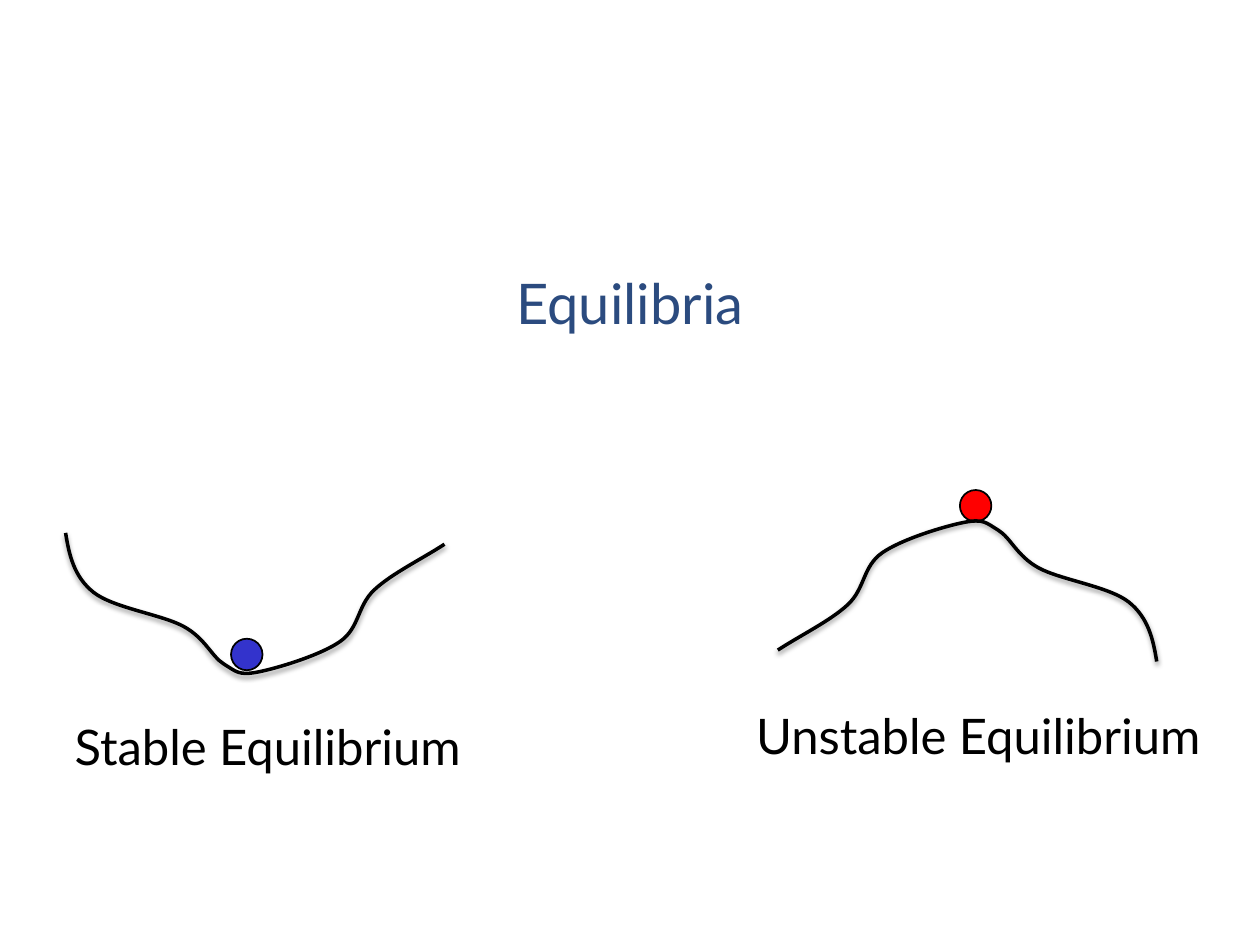
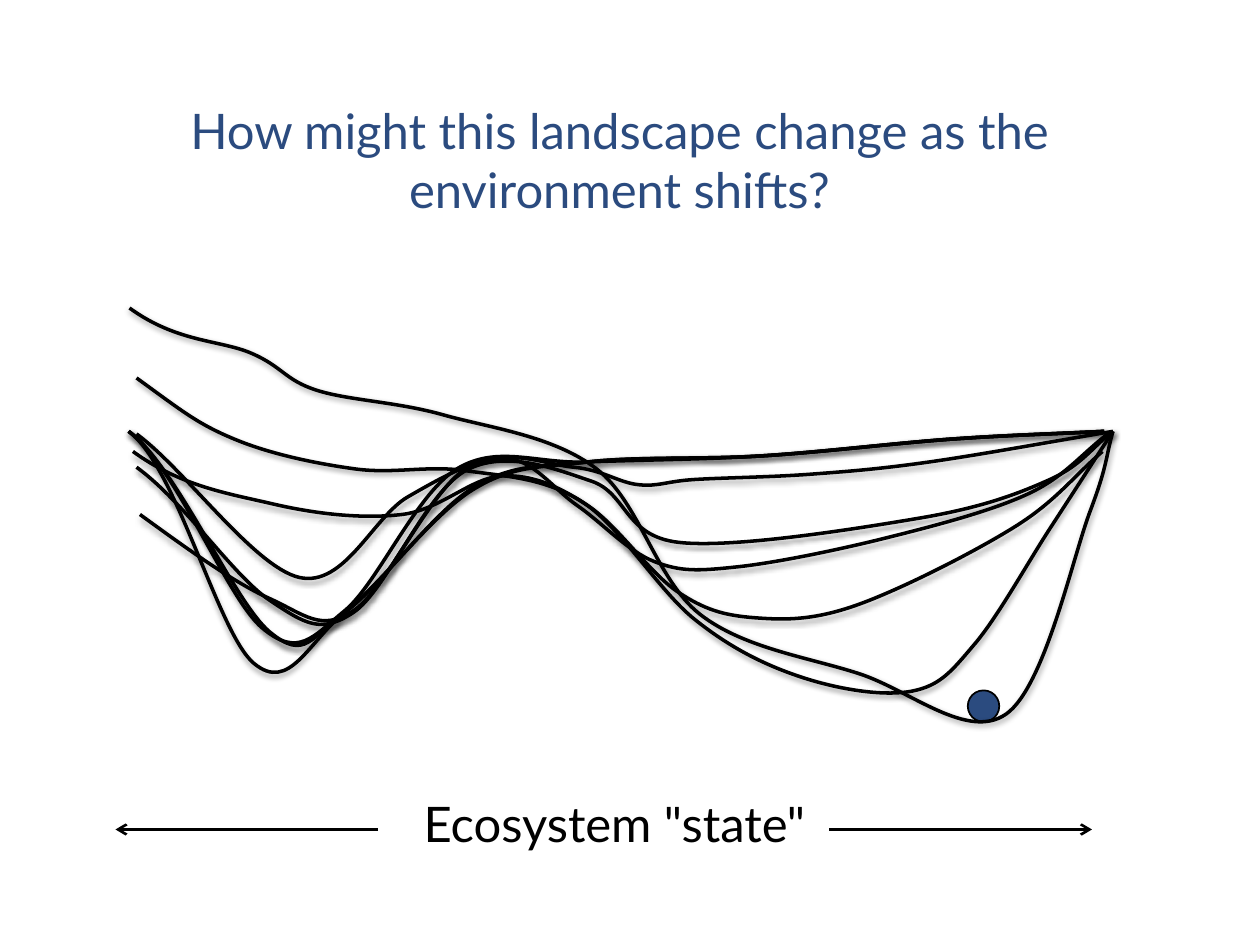
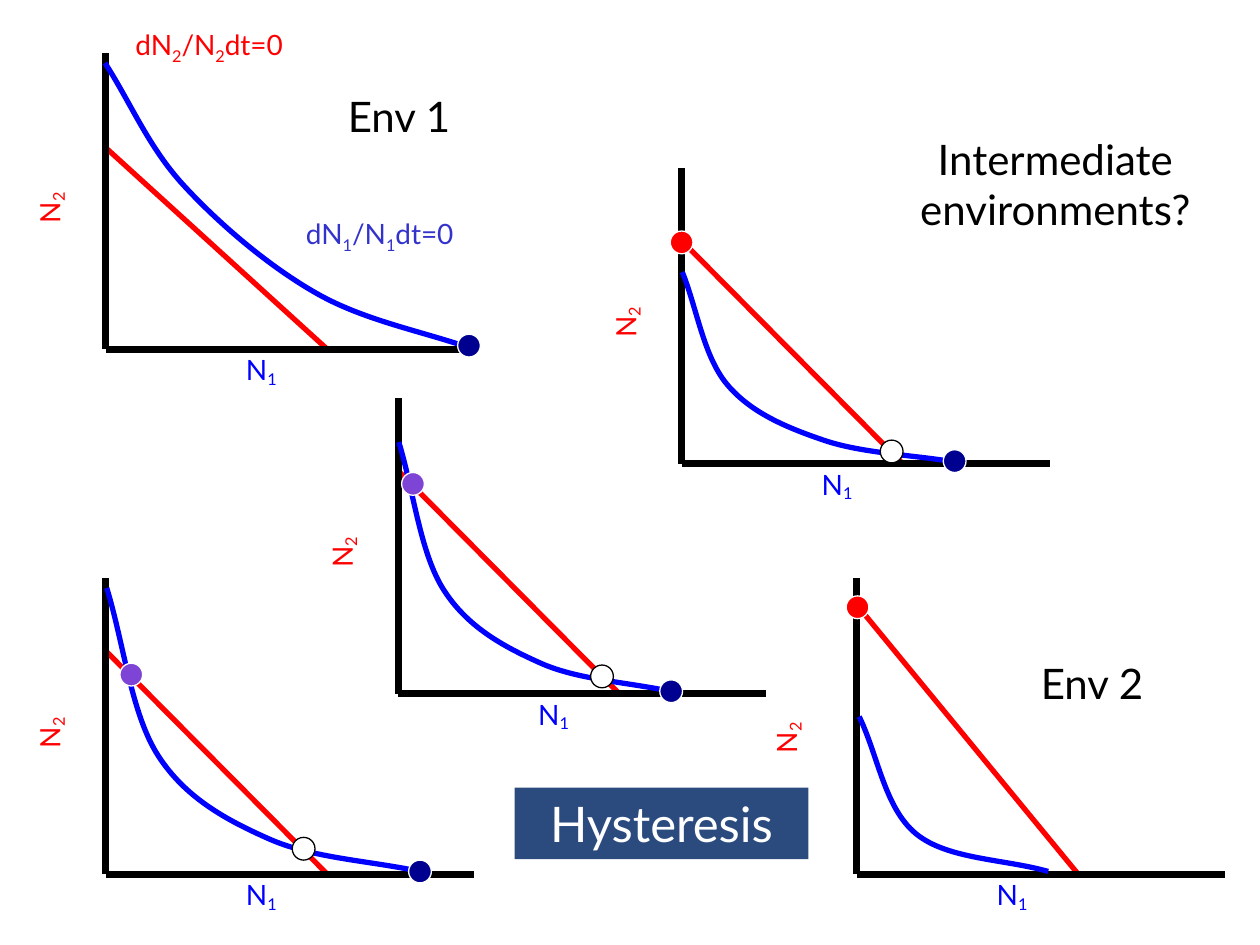
"""Build three slides on equilibria, shifting landscapes and hysteresis."""
from lxml.etree import SubElement
from pptx import Presentation
from pptx.dml.color import RGBColor
from pptx.enum.shapes import MSO_CONNECTOR as Connector, MSO_SHAPE as Shape
from pptx.enum.text import MSO_ANCHOR as Anchor, MSO_AUTO_SIZE as AutoSize, PP_ALIGN as Align
from pptx.oxml.ns import qn
from pptx.util import Pt

FONT = "Lato"
BLACK, WHITE, RED, BLUE = "000000", "FFFFFF", "FF0000", "0000FF"
SLATE, INDIGO, NAVY, PURPLE = "2B4B7F", "3333CC", "000090", "7E44D5"
TITLE_ONLY = 5
BALL_SIZE, DOT_SIZE = 18, 13
LINE_HEIGHT, MARGIN = 1.2, 3.6

VALLEY = [(37.5, 304.5), (53.5, 338.5), (105, 358), (128, 379.5), (147.5, 384),
          (194.5, 366.5), (214, 337), (254, 311)]
HILL = [(698.5 - x, 682.5 - y) for x, y in VALLEY]
EQUILIBRIA = [
    (VALLEY, (2, 12.5), (141, 374), INDIGO, "Stable Equilibrium", (12, 406)),
    (HILL, (-2, -12.5), (557.5, 289), RED, "Unstable Equilibrium", (418, 399.5)),
]
CAPTION_WIDTH = 282

LEFT_RIM, RIGHT_RIM = (73.5, 246.5), (636, 246.5)
SLOPE_START = (27.5, 20)
PLATEAU = [(336, 264), (436, 260.5), (543, 251), (631, 246.5)]
LANDSCAPES = [
    [(78, 267), (154, 343), (202, 350), (266, 269), (338, 275), (388, 310), (526, 296),
     (600, 274), RIGHT_RIM],
    [(80, 294), (154, 342), (202, 349), (266, 268), (328, 267), (365, 277), (397, 274),
     (463, 271), (531, 264), RIGHT_RIM],
    [(74, 176), (144, 202), (181, 223), (253, 237), (341, 268), (400, 351), (491, 385),
     (575, 408), (623, 292), RIGHT_RIM],
    [(78, 216), (134, 251), (203, 268), (266, 269), (333, 287), (397, 354), (458, 387),
     (521, 395), (557, 368), (600, 302), RIGHT_RIM],
    [(76, 258), (156, 288), (230, 294), (287, 272), (336, 289), (387, 338), (431, 353),
     (489, 346), (580, 301), (630, 258)],
    [(78, 248), (171, 330), (233, 284), (289, 262), (330, 289), (374, 321), (421, 324),
     (508, 307), (588, 282), (633, 248)],
    [LEFT_RIM, (150, 359), (197, 349), (261, 268), *PLATEAU],
    [LEFT_RIM, (145, 379), (197, 350), (270, 280), *PLATEAU],
    [LEFT_RIM, (154, 361), (197, 350), (270, 279), *PLATEAU],
]
ARROW_Y = 474
STATE_ARROWS = [(474, 624), (216, 66)]

AXIS_HEIGHT, AXIS_WIDTH, RED_REACH, RED_TOP = 169, 210.5, 127, -127.5
N1_OFFSET, N2_OFFSET = (73, -4.5), (-50.5, -96)
ISOCLINE = [(0.5, -163.5), (30, -67.5), (93.5, -20), (179.5, -1.5)]
PANELS = [
    {"origin": (60.5, 199.5), "red_top": -115, "dots": [(207.5, -2, NAVY)],
     "curve": [(-0.5, -163.5), (44.5, -93.5), (121, -31.5), (211.5, 0.5)]},
    {"origin": (489.5, 499.5), "red_top": -154, "n2_offset": (-58.5, -93),
     "dots": [(0.5, -152.5, RED)], "curve": [(1.5, -90), (34, -23), (109.5, -1.5)]},
    {"origin": (60.5, 499.5),
     "dots": [(179.5, -1.5, NAVY), (14.5, -114, PURPLE), (113, -14.5, WHITE)]},
    {"origin": (227.5, 396.5), "scale": (0.87, 0.88),
     "dots": [(156, -1.5, NAVY), (8.5, -120, PURPLE), (116.5, -10, WHITE)]},
    {"origin": (389.5, 265), "scale": (0.87, 0.67),
     "dots": [(156, -1.5, NAVY), (0, -126.5, RED), (120, -7, WHITE)]},
]
PANEL_NOTES = [
    ("dN_1_/N_1_dt=0", (156, 120), 122, 16, INDIGO),
    ("dN_2_/N_2_dt=0", (58.5, 12), 122, 16, RED),
    ("Env 1", (162, 48), 132, 24, BLACK),
    ("Env 2", (558, 372), 132, 24, BLACK),
    ("Intermediate environments?", (510, 72.5), 186, 24, BLACK),
]


def rgb(color):
    """Turn a hex string into a colour."""
    return RGBColor.from_string(color)


def shift(origin, offset):
    """Move an offset to its origin."""
    return origin[0] + offset[0], origin[1] + offset[1]


def toward(start, end, part):
    """Return a part of the way from start to end."""
    return (end[0] - start[0]) * part, (end[1] - start[1]) * part


def paint(shape, fill, line, width):
    """Set fill and outline and drop the shadow."""
    shape.shadow.inherit = False
    if fill:
        shape.fill.solid()
        shape.fill.fore_color.rgb = rgb(fill)
    else:
        shape.fill.background()
    shape.line.color.rgb = rgb(line)
    shape.line.width = Pt(width)


def write(shape, text, size, color, align=Align.CENTER, subscript=-25):
    """Write text in which underscores enclose subscripts."""
    frame = shape.text_frame
    frame.auto_size = AutoSize.NONE
    frame.word_wrap = True
    frame.vertical_anchor = Anchor.TOP
    paragraph = frame.paragraphs[0]
    paragraph.alignment = align
    for index, piece in enumerate(text.split("_")):
        if piece:
            run = paragraph.add_run()
            run.text = piece
            run.font.name = FONT
            run.font.size = Pt(size)
            run.font.color.rgb = rgb(color)
            if index % 2:
                run._r.get_or_add_rPr().set("baseline", str(subscript * 1000))
    return paragraph


def add_text(slide, text, corner, width, size, color):
    """Add a centred text box."""
    height = size * LINE_HEIGHT + 2 * MARGIN
    write(slide.shapes.add_textbox(*map(Pt, (*corner, width, height))), text, size, color)


def add_axis_label(slide, text, corner, color, rotation=0):
    """Add the name of a panel axis."""
    shape = slide.shapes.add_textbox(*map(Pt, (*corner, 33, 29)))
    shape.rotation = rotation
    write(shape, text, 16, color, Align.LEFT, -16).line_spacing = 1.15
    shape.text_frame.word_wrap = False


def add_title_slide(presentation, title, box, size, color=SLATE):
    """Add a slide and place its title."""
    slide = presentation.slides.add_slide(presentation.slide_layouts[TITLE_ONLY])
    shape = slide.shapes.title
    shape.left, shape.top, shape.width, shape.height = map(Pt, box)
    write(shape, title, size, color)
    return slide


def add_circle(slide, center, size, fill, line=BLACK, width=1):
    """Add a circle around a centre."""
    left, top = shift(center, (-size / 2, -size / 2))
    paint(slide.shapes.add_shape(Shape.OVAL, *map(Pt, (left, top, size, size))), fill, line, width)


def add_line(slide, start, end, color, width, arrow=False):
    """Add a straight line, with an arrowhead if asked."""
    line = slide.shapes.add_connector(Connector.STRAIGHT, *map(Pt, (*start, *end)))
    line.line.color.rgb = rgb(color)
    line.line.width = Pt(width)
    properties = line._element.spPr
    if arrow:
        SubElement(properties.find(qn("a:ln")), qn("a:tailEnd"), type="arrow")
    SubElement(properties, qn("a:effectLst"))


def bezier_points(knots, first_handle=None):
    """Return control points and knots of a smooth curve through the knots."""
    handles = [toward(before, after, 1 / 6) for before, after in zip(knots, knots[2:])]
    handles.insert(0, first_handle or toward(knots[0], knots[1], 1 / 3))
    handles.append(toward(knots[-2], knots[-1], 1 / 3))
    points = []
    for index, (start, end) in enumerate(zip(knots, knots[1:])):
        x, y = handles[index + 1]
        points += [shift(start, handles[index]), shift(end, (-x, -y)), end]
    return points


def add_curve(slide, knots, color, width, first_handle=None):
    """Add a smooth curve through the knots."""
    builder = slide.shapes.build_freeform(*map(Pt, knots[0]))
    points = bezier_points(knots, first_handle)
    builder.add_line_segments([(Pt(x), Pt(y)) for x, y in points], close=False)
    shape = builder.convert_to_shape()
    paint(shape, None, color, width)
    path = next(shape._element.iter(qn("a:path")))
    segments = iter(list(path)[1:])
    for first, second, third in zip(segments, segments, segments):
        first.tag = qn("a:cubicBezTo")
        for segment in (second, third):
            first.append(segment[0])
            path.remove(segment)
    return shape


def add_landscape(slide, knots, first_handle):
    """Add a black curve with a soft shadow below it."""
    shape = add_curve(slide, knots, BLACK, 2, first_handle)
    effects = shape._element.spPr.find(qn("a:effectLst"))
    shadow = SubElement(effects, qn("a:outerShdw"), blurRad=str(Pt(3.1)), dist=str(Pt(1.6)),
                        dir="5400000", rotWithShape="0")
    color = SubElement(shadow, qn("a:srgbClr"), val=BLACK)
    SubElement(color, qn("a:alpha"), val="38000")


def add_panel(slide, origin, dots, curve=ISOCLINE, scale=(1, 1), red_top=RED_TOP,
              n2_offset=N2_OFFSET):
    """Add axes, both isoclines and the equilibrium points."""
    add_line(slide, shift(origin, (0, red_top)), shift(origin, (RED_REACH, 0.5)), RED, 3)
    for end in ((0, -AXIS_HEIGHT), (AXIS_WIDTH, 0)):
        add_line(slide, origin, shift(origin, end), BLACK, 4)
    add_axis_label(slide, "N_1_", shift(origin, N1_OFFSET), BLUE)
    add_axis_label(slide, "N_2_", shift(origin, n2_offset), RED, 270)
    knots = [shift(origin, (x * scale[0], y * scale[1])) for x, y in curve]
    add_curve(slide, knots, BLUE, 3)
    for x, y, color in dots:
        outline = BLACK if color == WHITE else WHITE
        add_circle(slide, shift(origin, (x, y)), DOT_SIZE, color, outline, 0.75)


def main():
    """Build and save the slides."""
    presentation = Presentation()
    presentation.slide_width, presentation.slide_height = Pt(720), Pt(540)

    slide = add_title_slide(presentation, "Equilibria", (0, 150, 720, 46), 32)
    for curve, handle, center, color, caption, corner in EQUILIBRIA:
        add_circle(slide, center, BALL_SIZE, color)
        add_text(slide, caption, corner, CAPTION_WIDTH, 28, BLACK)
        add_landscape(slide, curve, handle)

    question = "How might this landscape change as the environment shifts?"
    slide = add_title_slide(presentation, question, (36, 54, 636, 75), 28)
    add_circle(slide, (562, 403.5), BALL_SIZE, SLATE)
    for curve in LANDSCAPES:
        add_landscape(slide, curve, SLOPE_START)
    add_text(slide, 'Ecosystem "state"', (54, 450), 594, 28, BLACK)
    for start, end in STATE_ARROWS:
        add_line(slide, (start, ARROW_Y), (end, ARROW_Y), BLACK, 1.5, arrow=True)

    slide = add_title_slide(presentation, "Hysteresis", (294, 450, 168, 41), 28, WHITE)
    title = slide.shapes.title
    title.fill.solid()
    title.fill.fore_color.rgb = rgb(SLATE)
    for panel in PANELS:
        add_panel(slide, **panel)
    for note in PANEL_NOTES:
        add_text(slide, *note)

    presentation.save("out.pptx")


if __name__ == "__main__":
    main()
